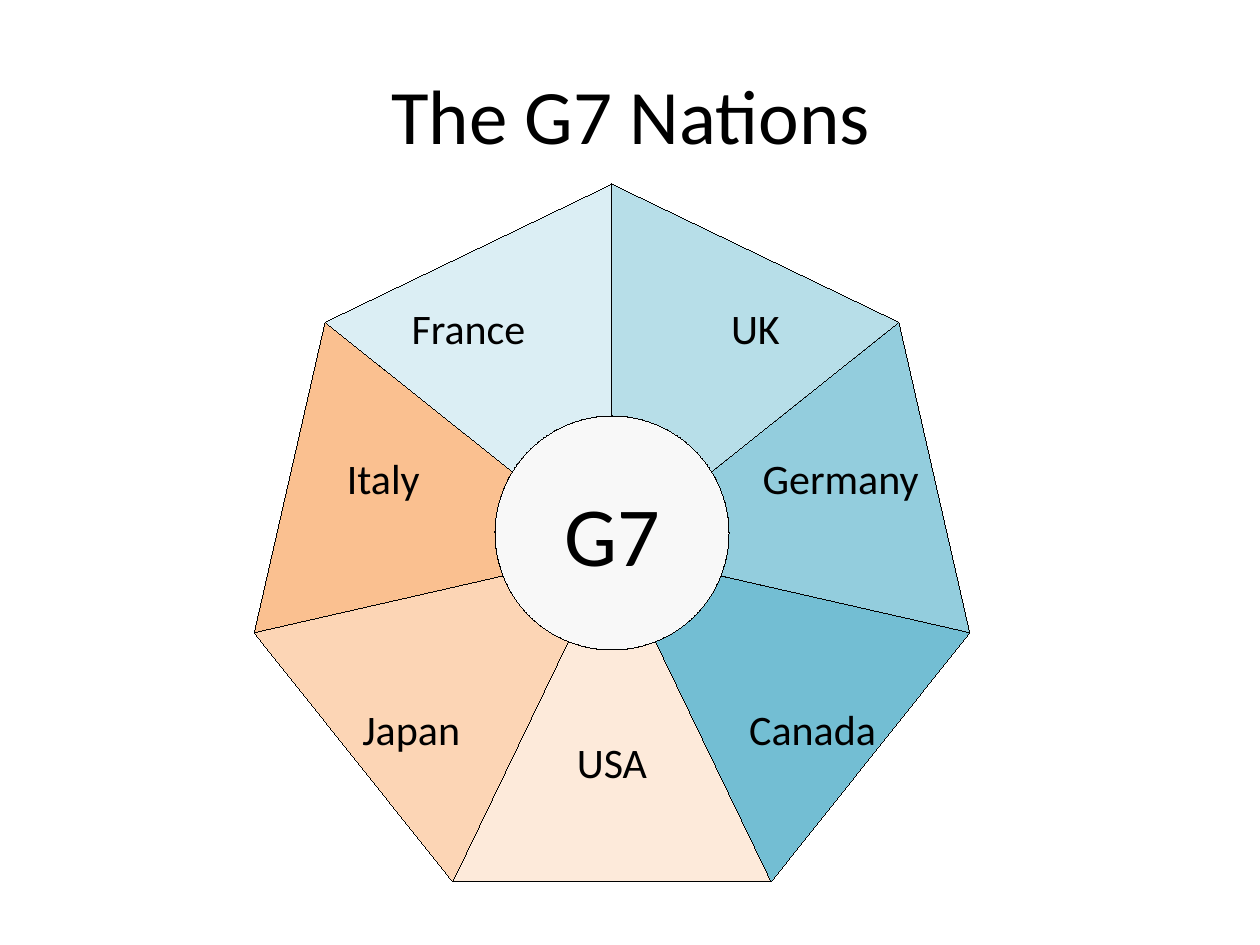
from dataclasses import dataclass
from math import atan2, cos, sin, sqrt, tau

from pptx import Presentation
from pptx.dml.color import RGBColor
from pptx.enum.shapes import MSO_SHAPE
from pptx.enum.text import MSO_ANCHOR, PP_ALIGN
from pptx.shapes.autoshape import Shape
from pptx.slide import Slide
from pptx.util import Emu, Inches, Pt

EMU_PER_PX = 914400 / 126
COLOURS = {
    "text": "000000",
    "outline": "000000",
    "hub": "F8F8F8",
    "UK": "B7DEE8",
    "Germany": "93CDDD",
    "Canada": "73BED3",
    "USA": "FDEADA",
    "Japan": "FCD5B5",
    "Italy": "FAC090",
    "France": "DBEEF4",
}
NATIONS = ("UK", "Germany", "Canada", "USA", "Japan", "Italy", "France")
ARC_STEPS = 12


@dataclass(frozen=True)
class Point:
    x: float
    y: float


@dataclass(frozen=True)
class Circle:
    centre: Point
    radius: int

    def at(self, angle: float) -> Point:
        """Point on the circle, with the angle clockwise from the top."""
        return Point(self.centre.x + self.radius * sin(angle),
                     self.centre.y - self.radius * cos(angle))


RIM = Circle(Point(612, 551), 367)
HUB = Circle(Point(612, 533), 117)


def px(length: float) -> Emu:
    return Emu(round(length * EMU_PER_PX))


def colour(name: str) -> RGBColor:
    return RGBColor.from_string(COLOURS[name])


def write(shape: Shape, text: str, size: int) -> None:
    frame = shape.text_frame
    frame.word_wrap = True
    frame.vertical_anchor = MSO_ANCHOR.MIDDLE
    paragraph = frame.paragraphs[0]
    paragraph.text = text
    paragraph.alignment = PP_ALIGN.CENTER
    paragraph.font.name = "Calibri"
    paragraph.font.size = Pt(size)
    paragraph.font.color.rgb = colour("text")


def paint(shape: Shape, fill: str) -> None:
    shape.shadow.inherit = False
    shape.fill.solid()
    shape.fill.fore_color.rgb = colour(fill)
    shape.line.color.rgb = colour("outline")
    shape.line.width = Emu(1)


def hub_angle(spoke: float) -> float:
    """Angle, seen from the hub, where a spoke from the rim centre meets it."""
    offset = RIM.centre.y - HUB.centre.y
    reach = offset * cos(spoke) + sqrt(HUB.radius ** 2 - (offset * sin(spoke)) ** 2)
    return atan2(reach * sin(spoke), reach * cos(spoke) - offset)


def add_wedge(slide: Slide, index: int, nation: str) -> None:
    start, end = (tau * step / len(NATIONS) for step in (index, index + 1))
    first = hub_angle(start)
    sweep = (hub_angle(end) - first) % tau
    arc = [HUB.at(first + sweep * step / ARC_STEPS) for step in range(ARC_STEPS, -1, -1)]
    corners = [(px(point.x), px(point.y)) for point in (RIM.at(start), RIM.at(end), *arc)]
    builder = slide.shapes.build_freeform(*corners[0])
    builder.add_line_segments(corners[1:], close=True)
    wedge = builder.convert_to_shape()
    paint(wedge, nation)
    write(wedge, nation, 24)


def add_hub(slide: Slide) -> None:
    hub = slide.shapes.add_shape(
        MSO_SHAPE.OVAL,
        px(HUB.centre.x - HUB.radius), px(HUB.centre.y - HUB.radius),
        px(2 * HUB.radius), px(2 * HUB.radius))
    paint(hub, "hub")
    write(hub, "G7", 48)


def main() -> None:
    presentation = Presentation()
    presentation.slide_width = Inches(10)
    presentation.slide_height = Inches(7.5)
    slide = presentation.slides.add_slide(presentation.slide_layouts[6])
    title = slide.shapes.add_textbox(px(64), px(35), px(1134), px(158))
    write(title, "The G7 Nations", 44)
    for index, nation in enumerate(NATIONS):
        add_wedge(slide, index, nation)
    add_hub(slide)
    presentation.save("out.pptx")


if __name__ == "__main__":
    main()
